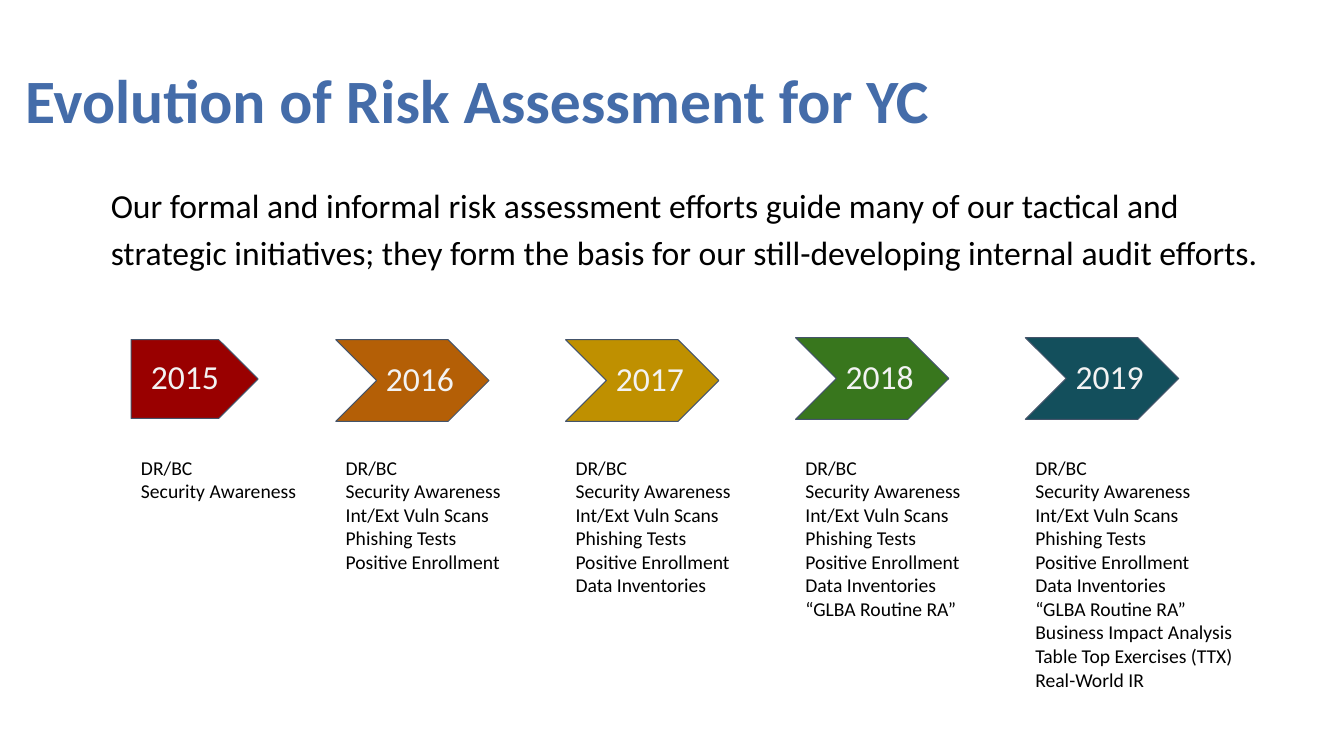
import dataclasses

import lxml.etree
import pptx
import pptx.dml.color
import pptx.enum.shapes
import pptx.enum.text
import pptx.util

PX = 9144
ANCHOR = pptx.enum.text.MSO_ANCHOR
ALIGN = pptx.enum.text.PP_ALIGN
SHAPE = pptx.enum.shapes.MSO_SHAPE


@dataclasses.dataclass(frozen=True)
class Theme:
    """Colours, font and type sizes of the slide."""
    font: str = "Calibri"
    title: str = "446CA9"
    text: str = "000000"
    year: str = "F3F3F3"
    outline: str = "44546A"
    markers: tuple = ("990000", "B45F06", "BF9000", "38761D", "134F5C")
    title_size: int = 44
    body_size: int = 24
    list_size: int = 14


@dataclasses.dataclass(frozen=True)
class Box:
    """A rectangle in px."""
    left: int
    top: int
    width: int
    height: int

    def emu(self):
        """Return the rectangle in EMU."""
        return [value * PX for value in dataclasses.astuple(self)]

    def inside(self, left, top, width, height):
        """Return a rectangle placed relative to this one."""
        return Box(self.left + left, self.top + top, width, height)


THEME = Theme()
ACTIVITIES = (
    "DR/BC",
    "Security Awareness",
    "Int/Ext Vuln Scans",
    "Phishing Tests",
    "Positive Enrollment",
    "Data Inventories",
    "“GLBA Routine RA”",
    "Business Impact Analysis",
    "Table Top Exercises (TTX)",
    "Real-World IR",
)
ACTIVITY_COUNTS = (2, 5, 6, 7, 10)
FIRST_YEAR = 2015


def color(value):
    """Turn a hex string into a colour."""
    return pptx.dml.color.RGBColor.from_string(value)


def add_text(slide, box, text, size, fill, bold=False, anchor=ANCHOR.TOP,
             align=ALIGN.LEFT, spacing=1.0, inset=10):
    """Add a wrapped text box with one style throughout."""
    frame = slide.shapes.add_textbox(*box.emu()).text_frame
    frame.word_wrap = True
    frame.vertical_anchor = anchor
    frame.margin_left = frame.margin_right = 10 * PX
    frame.margin_top = frame.margin_bottom = inset * PX
    frame.text = text
    for paragraph in frame.paragraphs:
        paragraph.alignment = align
        paragraph.line_spacing = spacing
        for run in paragraph.runs:
            run.font.name = THEME.font
            run.font.size = pptx.util.Pt(size)
            run.font.bold = bold
            run.font.color.rgb = color(fill)


def add_heading(slide, box):
    """Add the title and the introduction below it."""
    add_text(slide, box.inside(0, 0, 1016, 81),
             "Evolution of Risk Assessment for YC", THEME.title_size,
             THEME.title, bold=True, anchor=ANCHOR.BOTTOM, spacing=0.9, inset=5)
    add_text(slide, box.inside(85, 113, 1169, 108),
             "Our formal and informal risk assessment efforts guide many of our "
             "tactical and strategic initiatives; they form the basis for our "
             "still-developing internal audit efforts.",
             THEME.body_size, THEME.text, spacing=1.15, inset=5)


def add_marker(slide, box, preset, fill, year, label_left, label_top):
    """Add an arrow with its year."""
    shape = slide.shapes.add_shape(preset, *box.emu())
    shape.shadow.inherit = False
    shape.fill.solid()
    shape.fill.fore_color.rgb = color(fill)
    shape.line.color.rgb = color(THEME.outline)
    shape.line.width = pptx.util.Pt(0.75)
    add_text(slide, box.inside(label_left, label_top, 91, 47), str(year),
             THEME.body_size, THEME.year, anchor=ANCHOR.MIDDLE,
             align=ALIGN.CENTER)


def add_timeline(slide, box):
    """Add one arrow and one activity list for each year."""
    for index, (count, fill) in enumerate(zip(ACTIVITY_COUNTS, THEME.markers)):
        left = 228 * index - 25 if index else 0
        top = 0 if index > 2 else 2
        year = FIRST_YEAR + index
        if index:
            add_marker(slide, box.inside(left, top, 152, 81), SHAPE.CHEVRON,
                       fill, year, 38, 15)
        else:
            add_marker(slide, box.inside(left, top, 126, 78), SHAPE.PENTAGON,
                       fill, year, 8, 13)
        width = 233 if count == len(ACTIVITIES) else 186
        height = 188 if count > 6 else 121
        add_text(slide, box.inside(left, 107, width, height),
                 "\n".join(ACTIVITIES[:count]), THEME.list_size, THEME.text)


def main():
    """Build and save the slide."""
    presentation = pptx.Presentation()
    presentation.slide_width = 1333 * PX
    presentation.slide_height = 750 * PX
    slide = presentation.slides.add_slide(presentation.slide_layouts[6])
    add_heading(slide, Box(15, 60, 1254, 221))
    add_timeline(slide, Box(130, 335, 1120, 295))
    presentation.save("out.pptx")


if __name__ == "__main__":
    main()
